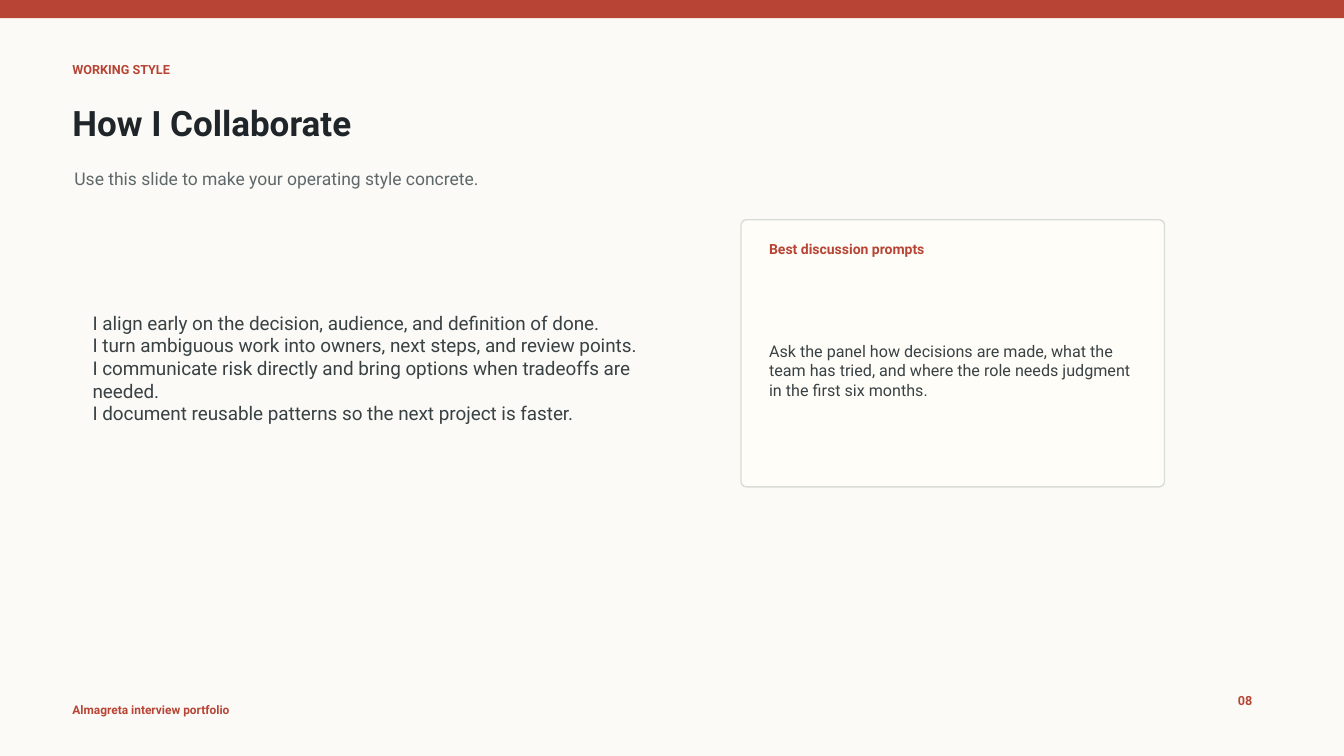
from dataclasses import dataclass

from pptx import Presentation
from pptx.dml.color import RGBColor
from pptx.enum.shapes import MSO_SHAPE
from pptx.enum.text import MSO_ANCHOR, PP_ALIGN
from pptx.shapes.autoshape import Shape
from pptx.util import Inches, Pt

RECT = MSO_SHAPE.RECTANGLE
ROUND = MSO_SHAPE.ROUNDED_RECTANGLE
MIDDLE = MSO_ANCHOR.MIDDLE
LEFT = PP_ALIGN.LEFT

FONT = "Roboto"
PAPER, CARD, EDGE = "FBFAF6", "FFFDF8", "D8DDD7"
RED, INK, BODY, MUTED = "B74434", "1F2528", "384144", "5E686B"

MARGIN = 0.62
CARD_X, CARD_Y, CARD_W, CARD_H = 7.35, 2.18, 4.2, 2.65
PAD = 0.18


@dataclass
class Label:
    text: str
    x: float
    y: float
    w: float
    h: float
    size: float
    color: str
    bold: bool = False


HABITS = "\n".join([
    "I align early on the decision, audience, and definition of done.",
    "I turn ambiguous work into owners, next steps, and review points.",
    "I communicate risk directly and bring options when tradeoffs are needed.",
    "I document reusable patterns so the next project is faster.",
])
PROMPT = ("Ask the panel how decisions are made, what the team has tried, "
          "and where the role needs judgment in the first six months.")
INNER_X, INNER_W = CARD_X + PAD, CARD_W - 2 * PAD

FRAME = [
    Label("Almagreta interview portfolio", MARGIN, 6.94, 3, 0.2, 8.5, RED, True),
    Label("08", 12.18, 6.82, 0.5, 0.25, 9, RED, True),
    Label("WORKING STYLE", MARGIN, 0.58, 4.8, 0.22, 9, RED, True),
    Label("How I Collaborate", MARGIN, 0.94, 9.8, 0.55, 25, INK, True),
    Label("Use this slide to make your operating style concrete.",
          0.64, 1.56, 10.8, 0.42, 12.5, MUTED),
    Label(HABITS, 0.82, 2.1, 6.05, 3.1, 13.5, BODY),
]
PROMPTS = [
    Label("Best discussion prompts",
          INNER_X, CARD_Y + 0.16, INNER_W, 0.25, 10, RED, True),
    Label(PROMPT, INNER_X, CARD_Y + 0.48, INNER_W, 2.03, 11.5, BODY),
]


def rgb(code: str) -> RGBColor:
    return RGBColor.from_string(code)


def add_panel(kind: MSO_SHAPE, x: float, y: float, w: float, h: float,
              fill: str) -> Shape:
    panel = slide.shapes.add_shape(kind, Inches(x), Inches(y), Inches(w), Inches(h))
    panel.shadow.inherit = False
    panel.fill.solid()
    panel.fill.fore_color.rgb = rgb(fill)
    panel.line.fill.background()
    return panel


def add_label(item: Label) -> None:
    box = slide.shapes.add_textbox(
        Inches(item.x), Inches(item.y), Inches(item.w), Inches(item.h))
    frame = box.text_frame
    frame.word_wrap = True
    frame.vertical_anchor = MIDDLE
    frame.text = item.text
    for para in frame.paragraphs:
        para.alignment = LEFT
        for run in para.runs:
            run.font.name = FONT
            run.font.size = Pt(item.size)
            run.font.bold = item.bold
            run.font.color.rgb = rgb(item.color)


# Slide and background
deck = Presentation()
deck.slide_width, deck.slide_height = Inches(13.33), Inches(7.5)
slide = deck.slides.add_slide(deck.slide_layouts[6])
slide.background.fill.solid()
slide.background.fill.fore_color.rgb = rgb(PAPER)

# Top band, headings, habits and footer
add_panel(RECT, 0, 0, 13.33, 0.18, RED)
for item in FRAME:
    add_label(item)

# Prompt card
card = add_panel(ROUND, CARD_X, CARD_Y, CARD_W, CARD_H, CARD)
card.adjustments[0] = 0.02
card.line.color.rgb = rgb(EDGE)
card.line.width = Pt(1)
for item in PROMPTS:
    add_label(item)

deck.save("out.pptx")
